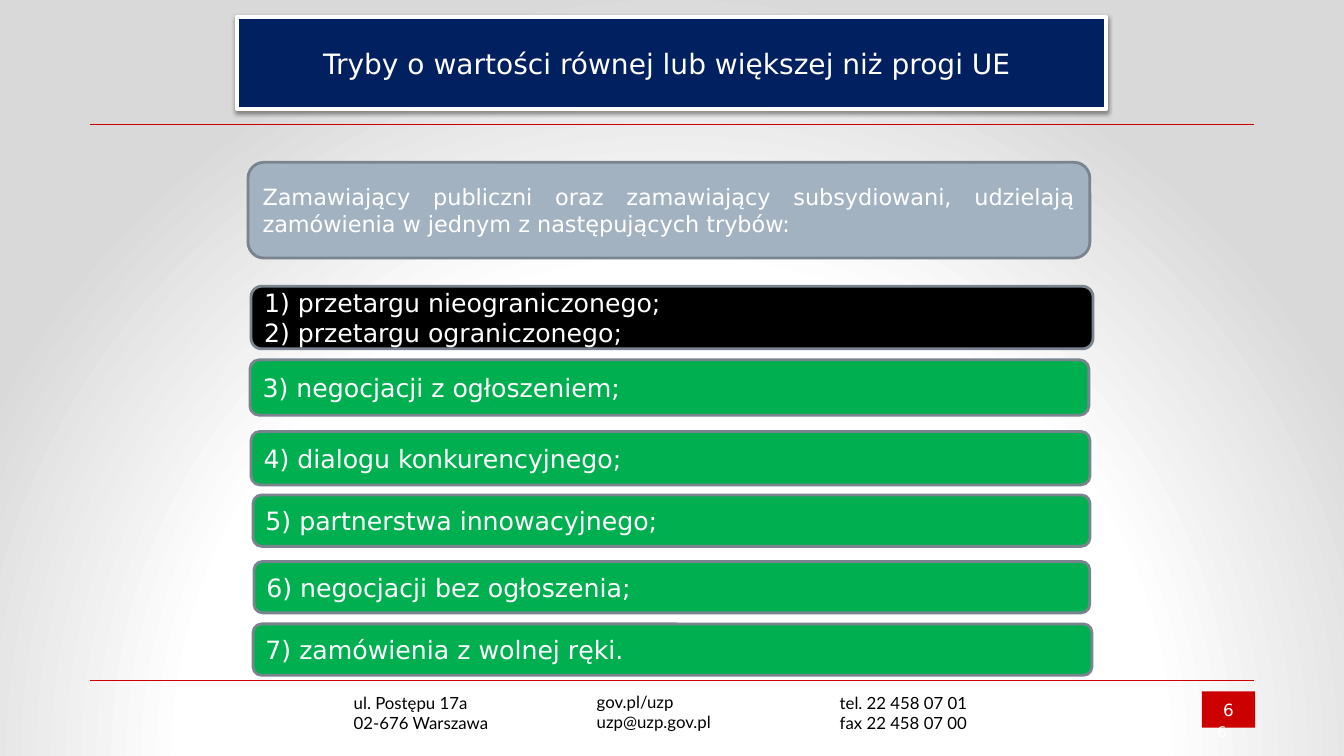
from lxml import etree
from pptx import Presentation
from pptx import util as u
from pptx.dml.color import RGBColor
from pptx.enum import shapes, text
from pptx.oxml import parse_xml
from pptx.oxml.ns import nsdecls, qn

W, H = 13.33, 7.5
COLORS = {"white": "FFFFFF", "black": "000000", "red": "CC0000", "navy": "002060",
          "steel": "A3B2C1", "edge": "79848F", "green": "00B050", "grey": "D9D9D9"}
SANS, LATO = "DejaVu Sans", "Lato"
ALIGN, ANCHOR = text.PP_ALIGN, text.MSO_ANCHOR


def color(name):
    return RGBColor.from_string(COLORS[name])


def place(box):
    x, y, w, h = box
    return [u.Inches(v * side / 100) for v, side in ((x, W), (y, H), (w, W), (h, H))]


def within(box, dx, dy, w, h):
    return box[0] + dx, box[1] + dy, w, h


def write(sp, content, size=18, font=SANS, ink="white", align=ALIGN.LEFT, anchor=ANCHOR.MIDDLE):
    tf = sp.text_frame
    tf.word_wrap = True
    tf.auto_size = text.MSO_AUTO_SIZE.NONE
    tf.vertical_anchor = anchor
    for i, line in enumerate(content.split("\n")):
        p = tf.add_paragraph() if i else tf.paragraphs[0]
        p.alignment = align
        r = p.add_run()
        r.text = line
        r.font.size = u.Pt(size)
        r.font.name = font
        r.font.color.rgb = color(ink)


def paint(sp, fill, edge=None, width=2):
    sp.fill.solid()
    sp.fill.fore_color.rgb = color(fill)
    if edge:
        sp.line.color.rgb = color(edge)
        sp.line.width = u.Pt(width)
    else:
        sp.line.fill.background()


def panel(s, box, content, fill, edge=None, kind=shapes.MSO_SHAPE.ROUNDED_RECTANGLE, **fmt):
    sp = s.shapes.add_shape(kind, *place(box))
    sp.shadow.inherit = False
    paint(sp, fill, edge)
    write(sp, content, **fmt)


def label(s, box, content, **fmt):
    write(s.shapes.add_textbox(*place(box)), content, **fmt)


def rule(s, box):
    x, y, w, h = place(box)
    line = s.shapes.add_connector(shapes.MSO_CONNECTOR.STRAIGHT, x, y, x + w, y + h)
    line.line.color.rgb = color("red")
    line.line.width = u.Pt(0.25)
    etree.SubElement(line._element.spPr, qn("a:effectLst"))


def background(s):
    s.background.fill.solid()
    stops = "".join(f'<a:gs pos="{pos}"><a:srgbClr val="{COLORS[name]}"/></a:gs>'
                    for pos, name in ((0, "white"), (63000, "white"), (100000, "grey")))
    bg = s.element.find(".//" + qn("p:bgPr"))
    bg.replace(bg[0], parse_xml(
        f'<a:gradFill {nsdecls("a")} rotWithShape="1"><a:gsLst>{stops}</a:gsLst><a:path path="circle">'
        '<a:fillToRect l="50000" t="130000" r="50000" b="-30000"/></a:path></a:gradFill>'))


def header(s, box):
    sp = s.shapes.title
    sp.left, sp.top, sp.width, sp.height = place(box)
    paint(sp, "navy", "white", 3)
    sp._element.spPr.append(parse_xml(
        f'<a:effectLst {nsdecls("a")}><a:outerShdw blurRad="{u.Pt(3.1)}" dist="{u.Pt(1.6)}" '
        f'dir="5400000" rotWithShape="0"><a:srgbClr val="{COLORS["black"]}">'
        '<a:alpha val="38000"/></a:srgbClr></a:outerShdw></a:effectLst>'))
    write(sp, "Tryby o wartości równej lub większej niż progi UE ", size=20, align=ALIGN.CENTER)


def modes(s, box):
    rows = [
        ("1) przetargu nieograniczonego;\n2) przetargu ograniczonego;", "black", 0.08, 0, 62.64, 8.27),
        ("3) negocjacji z ogłoszeniem;", "green", 0, 9.73, 62.42, 7.33),
        ("4) dialogu konkurencyjnego;", "green", 0.08, 19.2, 62.42, 7.07),
        ("5) partnerstwa innowacyjnego;", "green", 0.23, 27.6, 62.27, 6.8),
        ("6) negocjacji bez ogłoszenia;", "green", 0.3, 36.4, 62.19, 6.8),
        ("7) zamówienia z wolnej ręki.", "green", 0.23, 44.66, 62.42, 6.8),
    ]
    for content, fill, *offset in rows:
        panel(s, within(box, *offset), content, fill, "edge")


def footer(s, box):
    rule(s, within(box, 0, 0, box[2], 0))
    panel(s, within(box, 82.74, 1.47, 3.98, 4.8), "6", "red", kind=shapes.MSO_SHAPE.RECTANGLE,
          size=12, align=ALIGN.CENTER)
    contacts = [("ul. Postępu 17a\n02-676 Warszawa", 0.93),
                ("gov.pl/uzp\nuzp@uzp.gov.pl", 0.8),
                ("tel. 22 458 07 01\nfax 22 458 07 00", 0.93)]
    for i, (content, dy) in enumerate(contacts):
        label(s, within(box, 18.9 + 18.08 * i, dy, 16.5, 6.67), content,
              size=12, font=LATO, ink="black", anchor=ANCHOR.TOP)
    label(s, within(box, 74.57, 4.13, 10.73, 5.33), "6", size=10.5, align=ALIGN.RIGHT)


def main():
    prs = Presentation()
    prs.slide_width, prs.slide_height = u.Inches(W), u.Inches(H)
    s = prs.slides.add_slide(prs.slide_layouts[5])
    background(s)
    header(s, (17.63, 2.27, 64.67, 12.13))
    rule(s, (6.68, 16.4, 86.64, 0))
    panel(s, (18.45, 21.47, 62.64, 12.67),
          "Zamawiający publiczni oraz zamawiający subsydiowani, udzielają zamówienia "
          "w jednym z następujących trybów:", "steel", "edge", size=16, align=ALIGN.JUSTIFY)
    modes(s, (18.6, 37.87, 62.64, 51.46))
    footer(s, (6.68, 90, 86.64, 10))
    prs.save("out.pptx")


if __name__ == "__main__":
    main()
